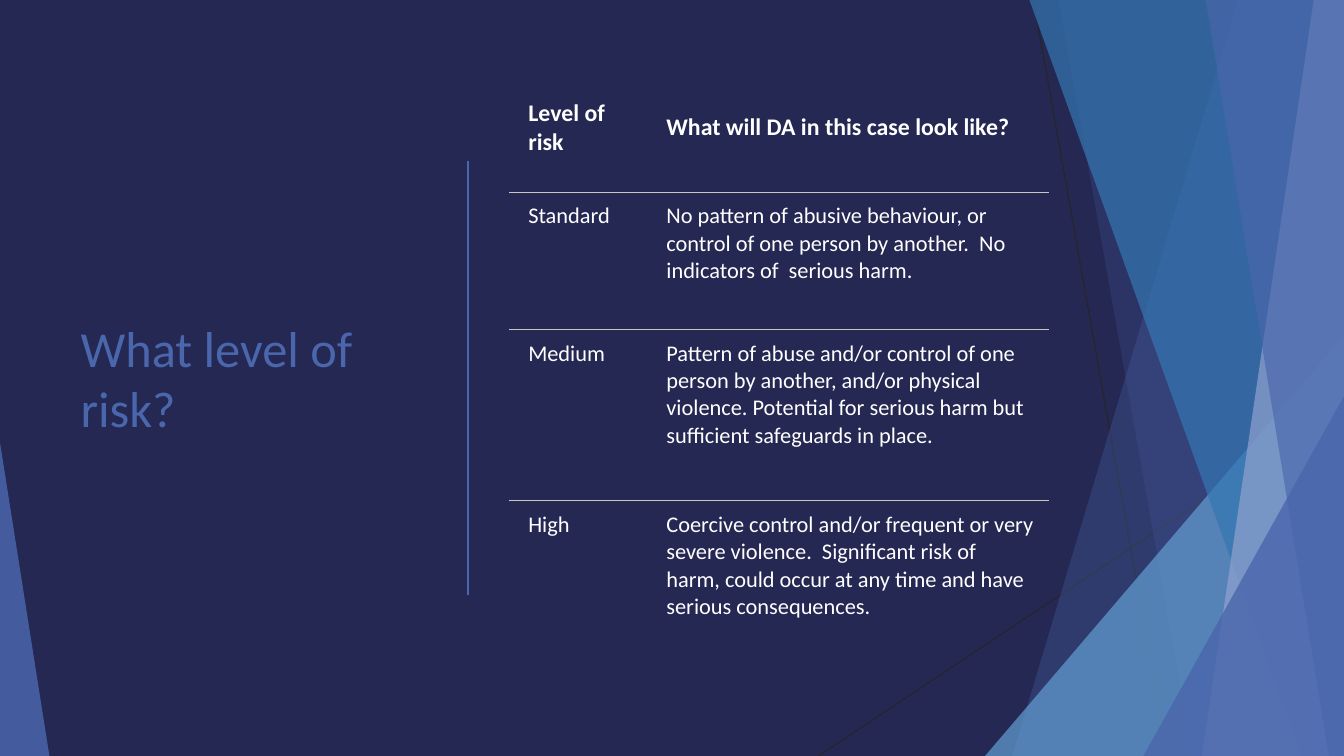
import pptx
import pptx.util
import pptx.dml.color
import pptx.enum.shapes
import pptx.enum.text
import pptx.oxml
import pptx.oxml.ns
from lxml import etree

Inches, Pt = pptx.util.Inches, pptx.util.Pt
COLORS = {
    "navy": "242852", "indigo": "4A66AC", "sky": "629DD1", "blue": "3477B2",
    "lilac": "90A2CF", "dark": "262626", "rule": "C7C6C1", "white": "FFFFFF",
}
FONT = "Calibri"
ROWS = [
    ("Level of risk", "What will DA in this case look like?"),
    ("Standard", "No pattern of abusive behaviour, or control of one person by "
                 "another.  No indicators of  serious harm."),
    ("Medium", "Pattern of abuse and/or control of one person by another, and/or "
               "physical violence. Potential for serious harm but sufficient "
               "safeguards in place."),
    ("High", "Coercive control and/or frequent or very severe violence.  "
             "Significant risk of harm, could occur at any time and have serious "
             "consequences."),
]


def rgb(name):
    return pptx.dml.color.RGBColor.from_string(COLORS[name])


def style_text(p, size, color, bold=False):
    for r in p.runs:
        r.font.name, r.font.size, r.font.bold = FONT, Pt(size), bold
        r.font.color.rgb = rgb(color)


def paint(sp, color, opacity):
    sp.shadow.inherit = False
    sp.line.fill.background()
    sp.fill.solid()
    sp.fill.fore_color.rgb = rgb(color)
    clr = sp.fill._xPr.find(".//" + pptx.oxml.ns.qn("a:srgbClr"))
    etree.SubElement(clr, pptx.oxml.ns.qn("a:alpha"), val=str(opacity * 1000))


def add_line(s, x1, y1, x2, y2, color, weight):
    line = s.shapes.add_connector(
        pptx.enum.shapes.MSO_CONNECTOR.STRAIGHT,
        Inches(x1), Inches(y1), Inches(x2), Inches(y2))
    line.line.color.rgb = rgb(color)
    line.line.width = Pt(weight)
    etree.SubElement(line._element.spPr, pptx.oxml.ns.qn("a:effectLst"))


def add_facets(s, left, top, width, height):
    """Translucent facets along the right edge and in the lower left corner."""
    right, bottom = left + width, top + height

    def band(top_x, bottom_x, color, opacity):
        fb = s.shapes.build_freeform(Inches(left + top_x), Inches(top), scale=1.0)
        fb.add_line_segments([(Inches(x), Inches(y)) for x, y in (
            (right, top), (right, bottom), (left + bottom_x, bottom))])
        paint(fb.convert_to_shape(), color, opacity)

    def corner(w, h, color, opacity, at_right=True):
        x = right - w if at_right else left
        sp = s.shapes.add_shape(
            pptx.enum.shapes.MSO_SHAPE.ISOSCELES_TRIANGLE,
            Inches(x), Inches(bottom - h), Inches(w), Inches(h))
        sp.adjustments[0] = 1 if at_right else 0
        paint(sp, color, opacity)

    # Thin dark lines behind the facets
    add_line(s, left + 10.25, top, left + 11.58, bottom, "dark", 0.75)
    add_line(s, right, top + 4.03, left + 8.12, bottom, "dark", 0.75)

    # Facets from back to front
    band(12.28, 10.04, "indigo", 30)
    band(10.5, 11.83, "indigo", 20)
    corner(3.56, 4.17, "sky", 72)
    band(10.21, 12.91, "blue", 70)
    band(13.03, 11.92, "lilac", 70)
    band(11.96, 13.18, "indigo", 65)
    corner(1.99, 3.57, "indigo", 80)
    corner(0.49, 3.11, "indigo", 85, at_right=False)


def add_title(s, left, top, width, height):
    """Slide title with the divider to its right."""
    divider_x = left + width + 0.93
    add_line(s, divider_x, top + 0.71, divider_x, top + height - 0.7, "indigo", 1)
    tb = s.shapes.add_textbox(
        Inches(left), Inches(top), Inches(width), Inches(height))
    tf = tb.text_frame
    tf.word_wrap = True
    tf.vertical_anchor = pptx.enum.text.MSO_ANCHOR.MIDDLE
    tf.text = "What level of risk?"
    style_text(tf.paragraphs[0], 36, "indigo")


def set_borders(cell, ruled):
    """Rule the named sides of a cell and clear the others."""
    tcPr = cell._tc.get_or_add_tcPr()
    for side in "LRTB":
        ln = etree.SubElement(tcPr, pptx.oxml.ns.qn("a:ln" + side), w=str(Pt(0.75)))
        if side in ruled:
            fill = etree.SubElement(ln, pptx.oxml.ns.qn("a:solidFill"))
            etree.SubElement(fill, pptx.oxml.ns.qn("a:srgbClr"), val=COLORS["rule"])
        else:
            etree.SubElement(ln, pptx.oxml.ns.qn("a:noFill"))


def add_risk_table(s, left, top, width, height):
    """Risk levels, with rules between the rows only."""
    table = s.shapes.add_table(
        len(ROWS), 2, Inches(left), Inches(top), Inches(width), Inches(height)).table
    table.first_row = table.horz_banding = False
    for col, w in zip(table.columns, (1.37, width - 1.37)):
        col.width = Inches(w)
    for row, h in zip(table.rows, (1.29, 1.36, 1.7, 1.36)):
        row.height = Inches(h)

    for i, texts in enumerate(ROWS):
        header = i == 0
        ruled = ("" if header else "T") + ("" if i == len(ROWS) - 1 else "B")
        for j, text in enumerate(texts):
            cell = table.cell(i, j)
            cell.text_frame.text = text
            style_text(cell.text_frame.paragraphs[0], 17 if header else 16,
                       "white", header)
            cell.margin_left, cell.margin_right = Inches(0.19), Inches(0.14)
            cell.margin_top = cell.margin_bottom = Inches(0.1)
            anchor = pptx.enum.text.MSO_ANCHOR
            cell.vertical_anchor = anchor.MIDDLE if header else anchor.TOP
            set_borders(cell, ruled)
            cell.fill.background()


def main():
    prs = pptx.Presentation()
    prs.slide_width, prs.slide_height = Inches(13.33), Inches(7.5)
    s = prs.slides.add_slide(prs.slide_layouts[6])
    s.background.fill.solid()
    s.background.fill.fore_color.rgb = rgb("navy")
    add_facets(s, 0, 0, 13.33, 7.5)
    add_title(s, 0.7, 0.89, 3.01, 5.71)
    add_risk_table(s, 5.05, 0.62, 5.35, 5.71)
    prs.save("out.pptx")


if __name__ == "__main__":
    main()
